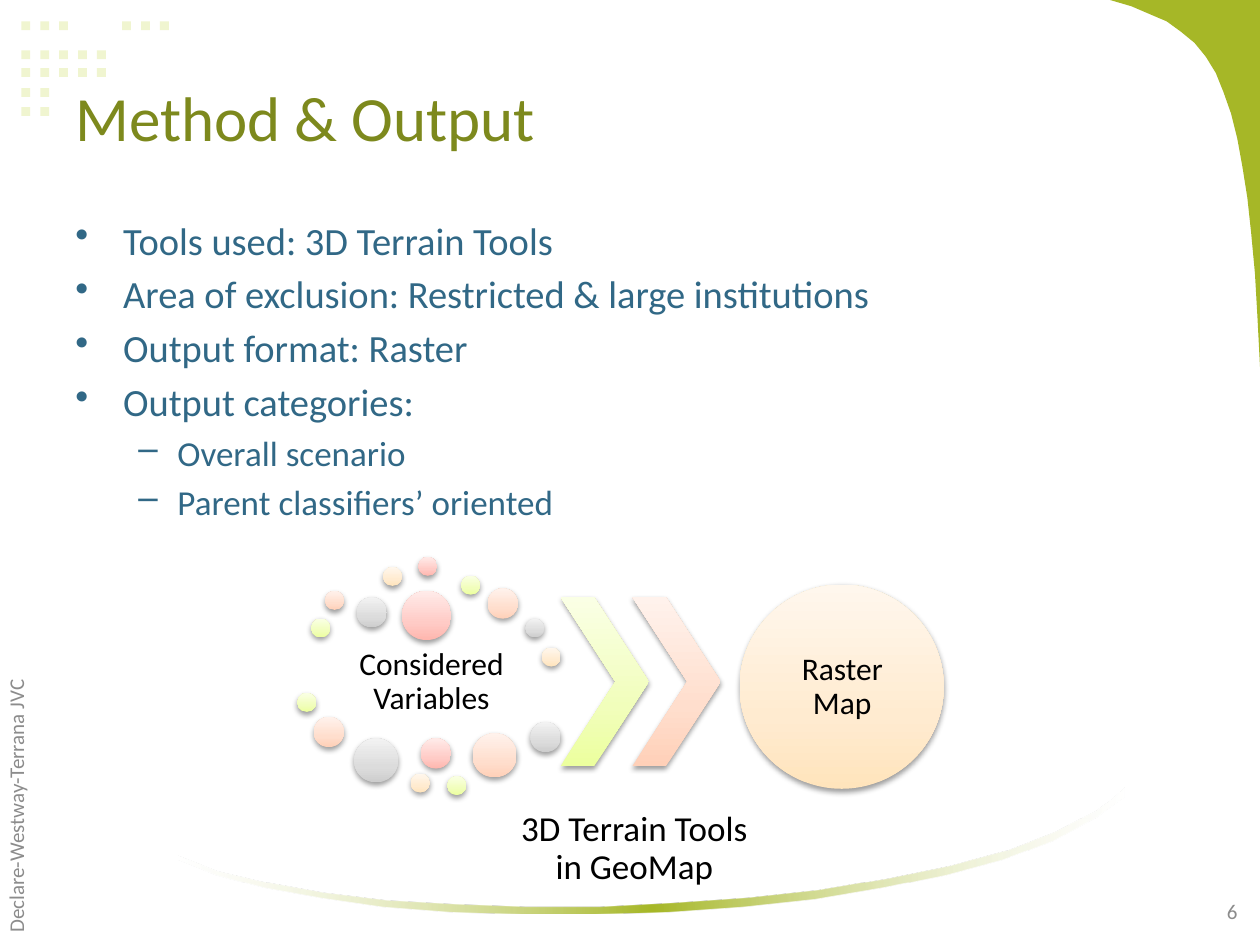
from lxml.etree import SubElement
from itertools import cycle
from pptx import Presentation
from pptx.dml.color import RGBColor
from pptx.enum.shapes import MSO_SHAPE as Preset
from pptx.enum.text import MSO_ANCHOR as Anchor, PP_ALIGN as Align
from pptx.oxml.ns import qn
from pptx.util import Inches, Pt

THEME = {
    "font": "Calibri",
    "title": (36, "7D891D"),
    "bullet": (22, "316886"),
    "sub_bullet": (20, "316886"),
    "label": (18, "000000"),
    "caption": (20, "000000"),
    "small": (12, "8C8C8C"),
    "dot": "F0F5D0",
    "accent": "A6B727",
    "sweep": [(0, "FFFFFF", 30), (50, "A6B727", 100), (100, "FFFFFF", 30)],
    "lime": ("ECFF9E", "F1FEBB", "FAFFE5"),
    "peach": ("FFD0B8", "FFDECD", "FFF2EC"),
    "grey": ("CDCDCD", "DCDCDC", "F2F2F2"),
    "orange": ("FFE4BC", "FFEBD0", "FFF7ED"),
    "rose": ("FFB6AE", "FFCBC6", "FFEBE9"),
}

TITLE = "Method & Output"
BULLETS = [
    (0, "Tools used: 3D Terrain Tools"),
    (0, "Area of exclusion: Restricted & large institutions"),
    (0, "Output format: Raster"),
    (0, "Output categories:"),
    (1, "Overall scenario"),
    (1, "Parent classifiers’ oriented"),
]
BULLET_STYLES = [("bullet", "•", 0.38, 0.38, 4.4), ("sub_bullet", "–", 0.81, 0.31, 4)]
LABELS = [
    ("Considered Variables", "label", (2.47, 5.1, 1.91, 0.63), 0.03),
    ("Raster Map", "label", (6.11, 4.88, 1.15, 1.15), 0),
    ("3D Terrain Tools in GeoMap", "caption", (4.08, 6.42, 1.91, 0.64), 0.03),
]
SIDE_CREDIT = "Declare-Westway-Terrana JVC"
PAGE_NUMBER = "6"

DOT_SIZE, DOT_PITCH = 0.07, 0.15
DOT_ROWS = [(0.17, 0.17, 3), (0.97, 0.17, 3), (0.17, 0.4, 5),
            (0.17, 0.54, 5), (0.17, 0.7, 2), (0.17, 0.85, 2)]

BUBBLE_COLORS = ["lime", "peach", "grey", "orange", "rose"]
BUBBLES = [
    (2.47, 4.91, 0.15), (2.58, 4.69, 0.15), (2.83, 4.74, 0.24),
    (3.04, 4.5, 0.15), (3.32, 4.42, 0.15), (3.66, 4.57, 0.15),
    (3.87, 4.67, 0.24), (4.17, 4.91, 0.15), (4.3, 5.14, 0.15),
    (3.19, 4.69, 0.39), (2.36, 5.5, 0.15), (2.49, 5.69, 0.24),
    (2.81, 5.86, 0.35), (3.26, 6.14, 0.15), (3.34, 5.86, 0.24),
    (3.55, 6.16, 0.15), (3.75, 5.82, 0.35), (4.21, 5.73, 0.24),
]
CHEVRONS = [(4.45, "lime"), (5.02, "peach")]

CORNER = [
    (881, 0), (1000, 0), (1000, 291), (998, 252), (996, 217), (993, 185),
    (990, 157), (986, 132), (982, 110), (977, 90), (971, 73), (965, 58),
    (957, 45), (948, 34), (937, 25), (926, 17), (912, 11), (898, 5),
]
SWEEP = [
    (892, 625), (892, 632), (867, 650), (835, 667), (795, 682), (750, 694),
    (700, 704), (646, 713), (589, 719), (531, 723), (472, 725), (414, 725),
    (357, 723), (304, 719), (255, 712), (210, 704), (172, 694), (142, 682),
    (142, 679), (173, 691), (212, 700), (257, 708), (307, 714), (361, 717),
    (417, 719), (476, 719), (534, 716), (593, 712), (649, 706), (703, 697),
    (753, 687), (798, 675), (837, 660), (868, 644), (881, 635),
]


def paint_flat(shape, color):
    shape.shadow.inherit = False
    shape.line.fill.background()
    shape.fill.solid()
    shape.fill.fore_color.rgb = RGBColor.from_string(color)


def paint_gradient(shape, stops, angle):
    shape.shadow.inherit = False
    shape.line.fill.background()
    shape.fill.gradient()
    shape.fill.gradient_angle = angle
    stop_list = shape._element.spPr.find(".//" + qn("a:gsLst"))
    for old_stop in list(stop_list):
        stop_list.remove(old_stop)
    for position, color, opacity in stops:
        stop = SubElement(stop_list, qn("a:gs"), pos=str(position * 1000))
        tint = SubElement(stop, qn("a:srgbClr"), val=color)
        if opacity < 100:
            SubElement(tint, qn("a:alpha"), val=str(opacity * 1000))


def add_soft_shape(slide, preset, box, color):
    shape = slide.shapes.add_shape(preset, *map(Inches, box))
    paint_gradient(shape, [(pos, tint, 100) for pos, tint in zip((0, 35, 100), THEME[color])], 90)
    effects = shape._element.spPr.find(qn("a:effectLst"))
    shadow = SubElement(effects, qn("a:outerShdw"), blurRad="40000", dist="20000",
                        dir="5400000", rotWithShape="0")
    black = SubElement(shadow, qn("a:srgbClr"), val="000000")
    SubElement(black, qn("a:alpha"), val="38000")
    return shape


def add_outline(slide, points):
    builder = slide.shapes.build_freeform(*points[0], scale=Inches(0.01))
    builder.add_line_segments(points[1:], close=True)
    return builder.convert_to_shape()


def style(paragraph, role):
    size, color = THEME[role]
    paragraph.font.name = THEME["font"]
    paragraph.font.size = Pt(size)
    paragraph.font.color.rgb = RGBColor.from_string(color)


def add_text(slide, text, role, box, align=Align.LEFT, inset=None):
    holder = slide.shapes.add_textbox(*map(Inches, box))
    frame = holder.text_frame
    frame.word_wrap = True
    frame.vertical_anchor = Anchor.MIDDLE
    if inset is not None:
        frame.margin_left = frame.margin_right = Inches(inset)
        frame.margin_top = frame.margin_bottom = Inches(inset)
    paragraph = frame.paragraphs[0]
    paragraph.text = text
    paragraph.alignment = align
    style(paragraph, role)
    return holder


def add_bullets(slide, box):
    frame = slide.shapes.add_textbox(*map(Inches, box)).text_frame
    frame.word_wrap = True
    for index, (level, text) in enumerate(BULLETS):
        role, mark, indent, hanging, gap = BULLET_STYLES[level]
        paragraph = frame.add_paragraph() if index else frame.paragraphs[0]
        paragraph.text = text
        paragraph.level = level
        paragraph.space_before = Pt(gap)
        style(paragraph, role)
        properties = paragraph._p.get_or_add_pPr()
        properties.set("marL", str(Inches(indent)))
        properties.set("indent", str(-Inches(hanging)))
        bullet = properties.makeelement(qn("a:buChar"), {"char": mark})
        properties.find(qn("a:defRPr")).addprevious(bullet)


def main():
    deck = Presentation()
    deck.slide_width, deck.slide_height = Inches(10), Inches(7.5)
    slide = deck.slides.add_slide(deck.slide_layouts[6])

    for left, top, count in DOT_ROWS:
        for column in range(count):
            box = (left + column * DOT_PITCH, top, DOT_SIZE, DOT_SIZE)
            paint_flat(slide.shapes.add_shape(Preset.RECTANGLE, *map(Inches, box)), THEME["dot"])
    paint_flat(add_outline(slide, CORNER), THEME["accent"])
    paint_gradient(add_outline(slide, SWEEP), THEME["sweep"], 0)

    add_text(slide, TITLE, "title", (0.5, 0.3, 9, 1.25))
    add_bullets(slide, (0.5, 1.67, 9, 2.67))

    for (left, top, size), color in zip(BUBBLES, cycle(BUBBLE_COLORS)):
        add_soft_shape(slide, Preset.OVAL, (left, top, size, size), color)
    for left, color in CHEVRONS:
        chevron = add_soft_shape(slide, Preset.CHEVRON, (left, 4.74, 0.7, 1.34), color)
        chevron.adjustments[0] = 0.62
    add_soft_shape(slide, Preset.OVAL, (5.87, 4.64, 1.62, 1.62), "orange")
    for text, role, box, inset in LABELS:
        label = add_text(slide, text, role, box, Align.CENTER, inset)
        label.text_frame.paragraphs[0].line_spacing = 0.9

    add_text(slide, SIDE_CREDIT, "small", (-1.46, 5.79, 3.17, 0.25)).rotation = 270
    add_text(slide, PAGE_NUMBER, "small", (9.5, 7.03, 0.42, 0.4), Align.RIGHT)
    deck.save("out.pptx")


if __name__ == "__main__":
    main()
